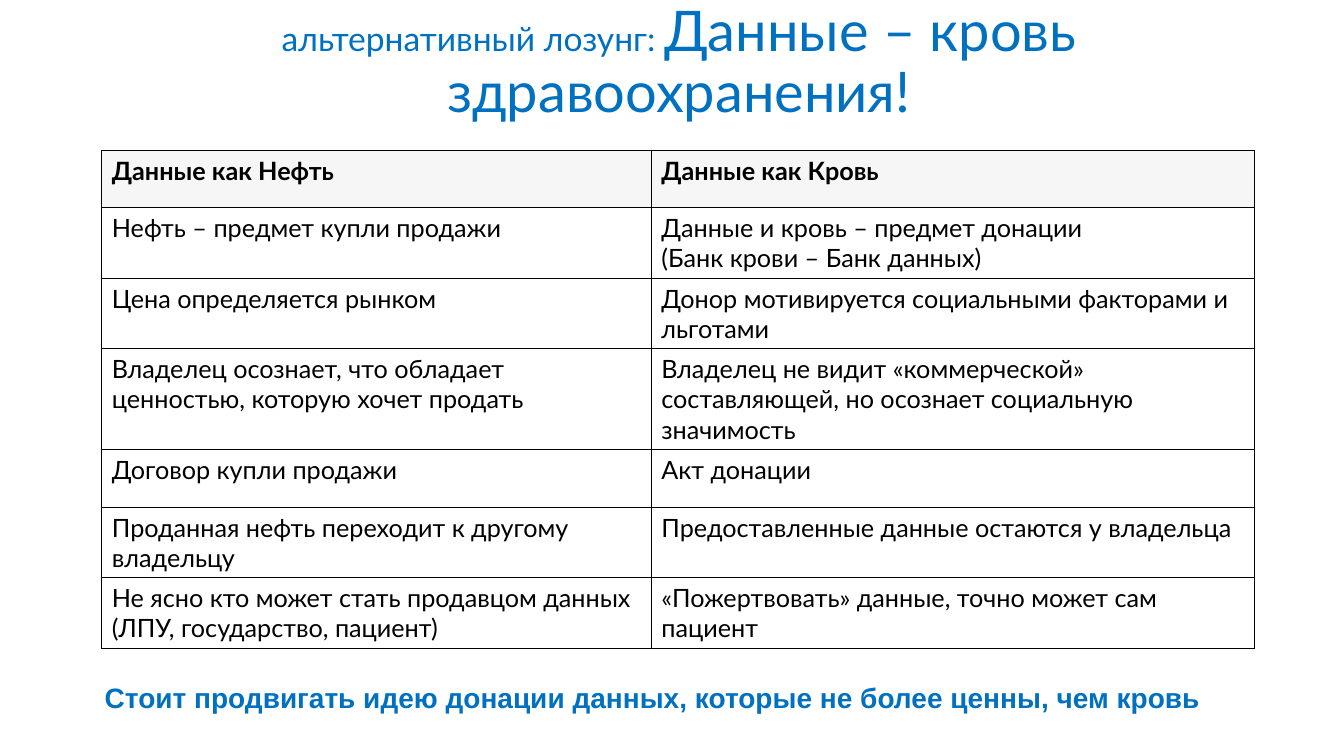
from lxml.etree import SubElement as Sub
from pptx import Presentation
from pptx.dml.color import RGBColor as Rgb
from pptx.enum.text import MSO_ANCHOR as Anchor, PP_ALIGN as Align
from pptx.oxml.ns import qn
from pptx.util import Inches, Pt

HUES = {"blue": "0070C0", "black": "000000", "head": "F6F6F6"}
COLS = [5.45, 5.98]
ROWS = [
    (0.57, "Данные как Нефть", "Данные как Кровь"),
    (0.7, "Нефть – предмет купли продажи",
     "Данные и кровь – предмет донации\n(Банк крови – Банк данных)"),
    (0.7, "Цена определяется рынком",
     "Донор мотивируется социальными факторами и льготами"),
    (1, "Владелец осознает, что обладает ценностью, которую хочет продать",
     "Владелец не видит «коммерческой» составляющей, "
     "но осознает социальную значимость"),
    (0.57, "Договор купли продажи", "Акт донации"),
    (0.7, "Проданная нефть переходит к другому владельцу",
     "Предоставленные данные остаются у владельца"),
    (0.7, "Не ясно кто может стать продавцом данных "
     "(ЛПУ, государство, пациент)",
     "«Пожертвовать» данные, точно может сам пациент"),
]


def write(para, text, size=18, font="Lato", hue="black", bold=False):
    run = para.add_run()
    run.text = text
    run.font.size = Pt(size)
    run.font.name = font
    run.font.bold = bold
    run.font.color.rgb = Rgb.from_string(HUES[hue])


def edge(cell, hue="black"):
    # Borders precede the fill in the cell properties
    props = cell._tc.get_or_add_tcPr()
    for i, side in enumerate(("lnL", "lnR", "lnT", "lnB")):
        line = Sub(props, qn("a:" + side), w=str(Pt(1)))
        fill = Sub(line, qn("a:solidFill"))
        Sub(fill, qn("a:srgbClr"), val=HUES[hue])
        props.insert(i, line)


def add_title(slide, x, y, w, h):
    title = slide.shapes.title
    title.left, title.top, title.width, title.height = map(Inches, (x, y, w, h))
    frame = title.text_frame
    frame.word_wrap = True
    frame.vertical_anchor = Anchor.MIDDLE
    para = frame.paragraphs[0]
    para.alignment = Align.CENTER
    para.line_spacing = 0.9
    write(para, "альтернативный лозунг: ", size=24, hue="blue")
    write(para, "Данные – кровь здравоохранения!", size=40, hue="blue")


def add_grid(slide, x, y, w, h):
    box = map(Inches, (x, y, w, h))
    table = slide.shapes.add_table(len(ROWS), len(COLS), *box).table
    table.horz_banding = False
    for col, width in zip(table.columns, COLS):
        col.width = Inches(width)
    for r, (high, *texts) in enumerate(ROWS):
        table.rows[r].height = Inches(high)
        for c, text in enumerate(texts):
            cell = table.cell(r, c)
            # Header row is shaded, the rest is clear
            if r == 0:
                cell.fill.solid()
                cell.fill.fore_color.rgb = Rgb.from_string(HUES["head"])
            else:
                cell.fill.background()
            edge(cell)
            frame = cell.text_frame
            for i, part in enumerate(text.split("\n")):
                para = frame.add_paragraph() if i else frame.paragraphs[0]
                write(para, part, bold=r == 0)


def add_note(slide, x, y, w, h):
    frame = slide.shapes.add_textbox(*map(Inches, (x, y, w, h))).text_frame
    frame.word_wrap = True
    write(frame.paragraphs[0],
          "Стоит продвигать идею донации данных, "
          "которые не более ценны, чем кровь",
          size=20, font="Arial", hue="blue", bold=True)


def main():
    deck = Presentation()
    deck.slide_width, deck.slide_height = Inches(13.33), Inches(7.5)
    slide = deck.slides.add_slide(deck.slide_layouts[5])
    add_title(slide, 0.56, -0.09, 12.35, 1.45)
    add_grid(slide, 1.01, 1.49, sum(COLS), 4.95)
    add_note(slide, 0.94, 6.7, 11.97, 0.44)
    deck.save("out.pptx")


if __name__ == "__main__":
    main()
